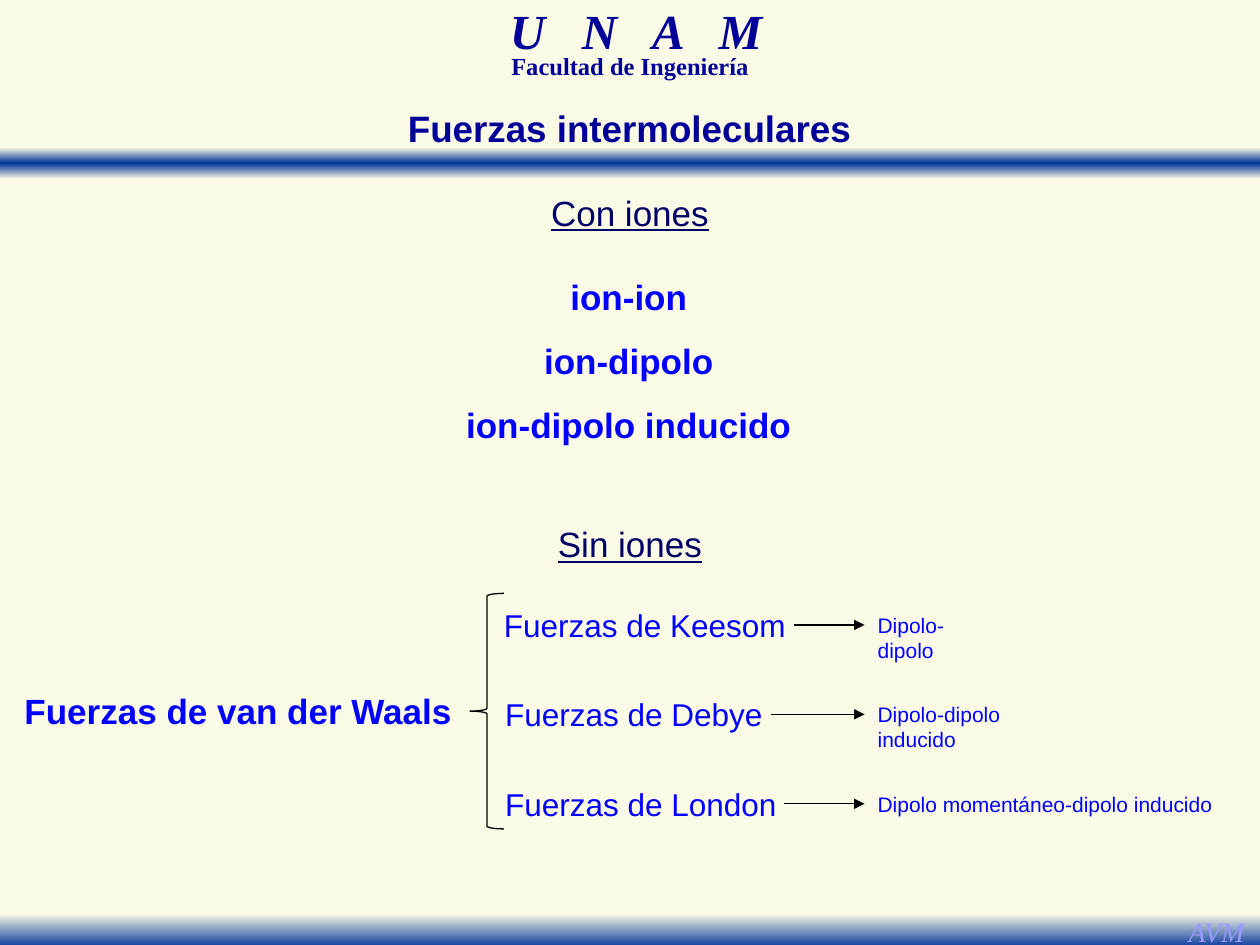
from lxml import etree
from pptx import Presentation
from pptx.dml.color import RGBColor
from pptx.enum.shapes import MSO_CONNECTOR, MSO_SHAPE
from pptx.enum.text import PP_ALIGN
from pptx.oxml.ns import qn
from pptx.util import Pt

CENTER, JUSTIFY = PP_ALIGN.CENTER, PP_ALIGN.JUSTIFY
STRAIGHT = MSO_CONNECTOR.STRAIGHT
RECTANGLE, LEFT_BRACE = MSO_SHAPE.RECTANGLE, MSO_SHAPE.LEFT_BRACE
SANS, SERIF = "Arial", "Times New Roman"

CREAM = RGBColor(0xFA, 0xFA, 0xE6)
BAND_BLUE = RGBColor(0x00, 0x33, 0x99)
TITLE_BLUE = RGBColor(0x00, 0x00, 0x99)
HEADING_BLUE = RGBColor(0x00, 0x00, 0x66)
BLUE = RGBColor(0x00, 0x00, 0xFF)
LILAC = RGBColor(0x99, 0x99, 0xFF)
BLACK = RGBColor(0, 0, 0)

WIDTH, HEIGHT = 720, 540

# Gradient bands: top, height, colours from top to bottom
BANDS = [
    (84.24, 18, [CREAM, BAND_BLUE, CREAM]),
    (522, 20, [CREAM, BAND_BLUE]),
]
# Section headings: text, top, width
HEADINGS = [("Con iones", 105.8, 106), ("Sin iones", 295.2, 98)]
# Forces with ions: text, width
ION_FORCES = [("ion-ion", 82), ("ion-dipolo", 112), ("ion-dipolo inducido", 202)]
ION_TOP, ION_STEP, ION_CENTER = 154.1, 36.4, 359.3
# Van der Waals forces: name, left, width, arrow start, interaction, its width
VAN_DER_WAALS = [
    ("Fuerzas de Keesom", 288, 162.7, 453.6, "Dipolo-dipolo", 70),
    ("Fuerzas de Debye", 288.7, 148.3, 440.6, "Dipolo-dipolo inducido", 118),
    ("Fuerzas de London", 288.7, 156.2, 447.8, "Dipolo momentáneo-dipolo inducido", 196.6),
]
ROW_CENTER, ROW_STEP = 357.1, 51.1
ARROW_END, INTERACTION_LEFT = 494, 501.5


def add_text(slide, text, box, size, color, face=SANS, align=CENTER, wrap=False,
             inset=True, spacing=None, bold=False, italic=False, underline=False):
    frame = slide.shapes.add_textbox(*map(Pt, box)).text_frame
    frame.word_wrap = wrap
    if not inset:
        frame.margin_left = frame.margin_right = 0
        frame.margin_top = frame.margin_bottom = 0
    paragraph = frame.paragraphs[0]
    paragraph.text = text
    paragraph.alignment = align
    if spacing:
        paragraph.line_spacing = spacing
    font = paragraph.font
    font.name, font.size, font.color.rgb = face, Pt(size), color
    font.bold, font.italic, font.underline = bold, italic, underline
    return paragraph


def add_band(slide, top, height, colors):
    band = slide.shapes.add_shape(RECTANGLE, 0, Pt(top), Pt(WIDTH), Pt(height))
    band.shadow.inherit = False
    band.line.fill.background()
    band.fill.gradient()
    band.fill.gradient_angle = 270
    stops = next(band._element.spPr.iter(qn("a:gsLst")))
    for stop in list(stops):
        stops.remove(stop)
    for i, color in enumerate(colors):
        position = 100000 * i // (len(colors) - 1)
        stop = etree.SubElement(stops, qn("a:gs"), pos=str(position))
        etree.SubElement(stop, qn("a:srgbClr"), val=str(color))


def add_arrow(slide, start, end, y):
    arrow = slide.shapes.add_connector(STRAIGHT, Pt(start), Pt(y), Pt(end), Pt(y))
    arrow.line.color.rgb, arrow.line.width = BLACK, Pt(0.75)
    etree.SubElement(arrow.line._get_or_add_ln(), qn("a:tailEnd"), type="triangle")
    etree.SubElement(arrow._element.spPr, qn("a:effectLst"))


def add_brace(slide, box):
    brace = slide.shapes.add_shape(LEFT_BRACE, *map(Pt, box))
    brace.shadow.inherit = False
    brace.fill.background()
    brace.line.color.rgb, brace.line.width = BLACK, Pt(0.75)


def main():
    prs = Presentation()
    prs.slide_width, prs.slide_height = Pt(WIDTH), Pt(HEIGHT)
    slide = prs.slides.add_slide(prs.slide_layouts[6])
    slide.background.fill.solid()
    slide.background.fill.fore_color.rgb = CREAM

    for band in BANDS:
        add_band(slide, *band)

    school = add_text(slide, "U N A M", (222.4, 5.8, 282.2, 31), 28, TITLE_BLUE, SERIF,
                      wrap=True, spacing=0.7, bold=True, italic=True)
    school.runs[0].font._element.set("spc", "700")  # letter spacing of 7 pt
    add_text(slide, "Facultad de Ingeniería", (231.1, 30.2, 257.8, 18.7), 14, TITLE_BLUE,
             SERIF, wrap=True, spacing=0.7, bold=True)
    add_text(slide, "AVM", (670.3, 519.1, 49.7, 26.6), 16, LILAC, SERIF, italic=True)
    add_text(slide, "Fuerzas intermoleculares", (203.8, 56.9, 311.8, 32.4), 21,
             TITLE_BLUE, wrap=True, bold=True)

    for heading, top, width in HEADINGS:
        add_text(slide, heading, ((WIDTH - width) / 2, top, width, 31.7), 20,
                 HEADING_BLUE, underline=True)

    for i, (force, width) in enumerate(ION_FORCES):
        box = (ION_CENTER - width / 2, ION_TOP + i * ION_STEP, width, 31.7)
        add_text(slide, force, box, 20, BLUE, bold=True)

    add_text(slide, "Fuerzas de van der Waals", (5.8, 390.2, 260.6, 31.7), 20, BLUE, bold=True)
    add_brace(slide, (268.6, 339.1, 19.4, 134.6))
    for i, (force, left, width, start, interaction, interaction_width) in enumerate(VAN_DER_WAALS):
        y = ROW_CENTER + i * ROW_STEP
        add_text(slide, force, (left, y - 10.8, width, 21.6), 18, BLUE,
                 align=JUSTIFY, inset=False)
        add_arrow(slide, start, ARROW_END, y)
        add_text(slide, interaction, (INTERACTION_LEFT, y - 7.2, interaction_width, 14.4),
                 12, BLUE, align=JUSTIFY, inset=False)

    prs.save("out.pptx")


if __name__ == "__main__":
    main()
